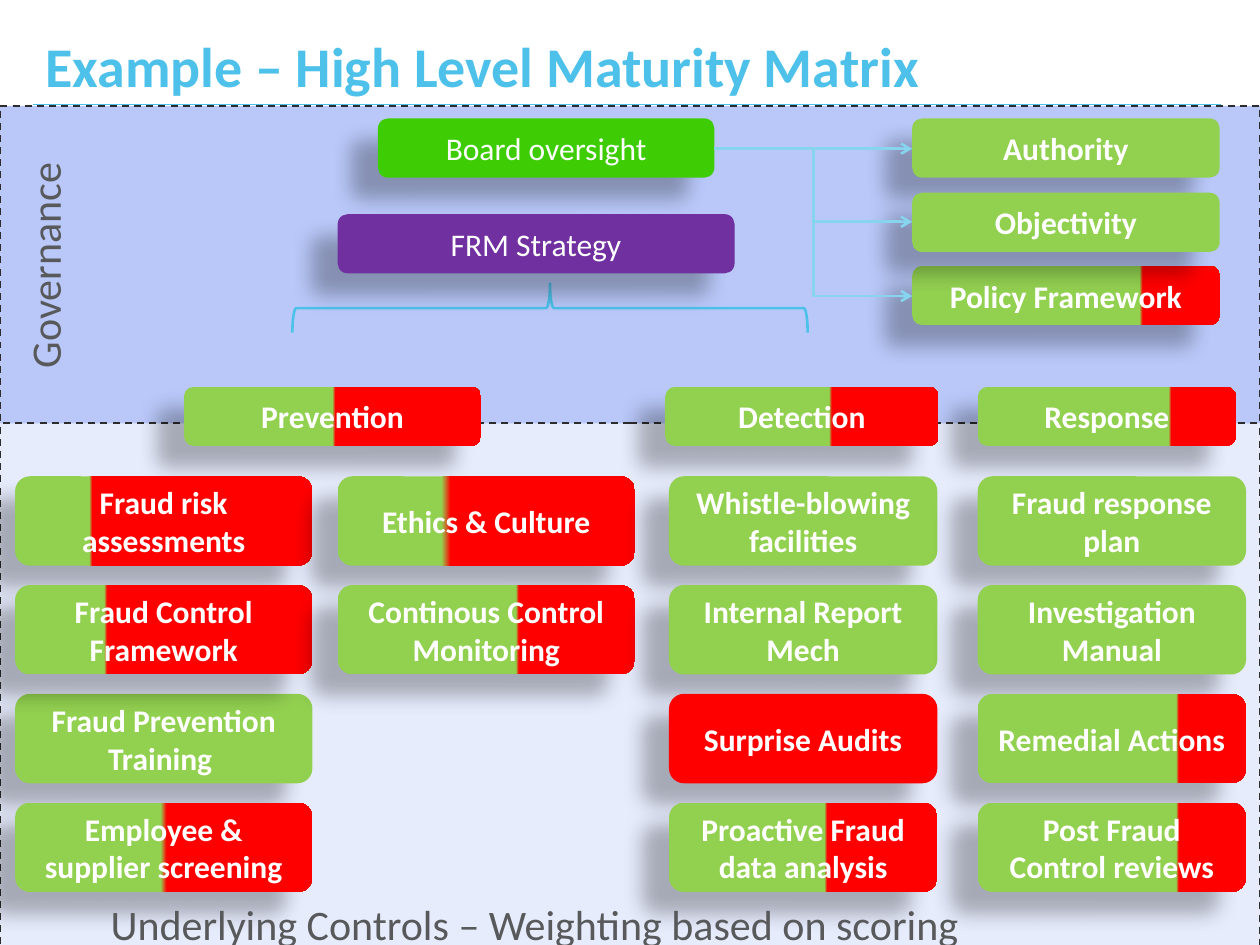
"""Build the high level maturity matrix slide."""
from dataclasses import dataclass

from lxml.etree import SubElement
from pptx import Presentation
from pptx.dml.color import RGBColor
from pptx.enum.dml import MSO_LINE_DASH_STYLE as DASH
from pptx.enum.shapes import MSO_CONNECTOR as WIRE, MSO_SHAPE as SHAPE
from pptx.enum.text import MSO_ANCHOR as ANCHOR, MSO_AUTO_SIZE as FIT, PP_ALIGN as ALIGN
from pptx.oxml.ns import qn
from pptx.util import Inches, Pt


@dataclass(frozen=True)
class Theme:
    font: str = "Calibri"
    title_size: int = 32
    label_size: int = 24
    card_size: int = 18
    accent: str = "4EC1EA"
    arrow: str = "87D4EE"
    label: str = "58595B"
    white: str = "FFFFFF"
    border: str = "2C2C2D"
    governance: str = "B9C8F9"
    controls: str = "E7ECFD"
    mature: str = "92D050"
    gap: str = "FF0000"
    board: str = "3ECD05"
    strategy: str = "7030A0"
    shadow: str = "000000"


THEME = Theme()
HEADER_HEIGHT, CARD_HEIGHT = 0.47, 0.71
FIRST_ROW, LAST_ROW, ROW_COUNT = 3.78, 6.37, 4
ROW_PITCH = (LAST_ROW - FIRST_ROW) / (ROW_COUNT - 1)

PILLARS = [
    (1.46, 2.36, "Prevention", (50, 51)),
    (5.28, 2.17, "Detection", (60, 61)),
    (7.76, 2.05, "Response", (74, 75)),
]
CONTROLS = [
    (0.12, 2.36, [
        (0, "Fraud risk assessments", (25, 26)),
        (2, "Fraud Prevention Training ", THEME.mature),
        (3, "Employee & supplier screening", (49, 51)),
        (1, "Fraud Control Framework", (30, 31)),
    ]),
    (2.68, 2.36, [
        (0, "Ethics & Culture", (35, 38)),
        (1, "Continous Control Monitoring", (60, 61)),
    ]),
    (5.31, 2.13, [
        (0, "Whistle-blowing facilities", THEME.mature),
        (1, "Internal Report Mech", THEME.mature),
        (2, "Surprise Audits", THEME.gap),
        (3, "Proactive Fraud data analysis", (58, 59)),
    ]),
    (7.76, 2.13, [
        (0, "Fraud response plan", THEME.mature),
        (1, "Investigation Manual", THEME.mature),
        (2, "Remedial Actions", (74, 75)),
        (3, "Post Fraud Control reviews", (74, 75)),
    ]),
]
OVERSIGHT = [
    (3, 0.94, 2.67, "Board oversight", THEME.board, False),
    (2.68, 1.7, 3.15, "FRM Strategy", THEME.strategy, False),
    (7.24, 0.94, 2.44, "Authority", THEME.mature, True),
    (7.24, 2.11, 2.44, "Policy Framework", (74, 75), True),
    (7.24, 1.53, 2.44, "Objectivity", THEME.mature, True),
]
ARROWS = [(WIRE.STRAIGHT, 1.18), (WIRE.ELBOW, 1.76), (WIRE.ELBOW, 2.35)]


def rgb(value):
    """Turn a hex string into a colour."""
    return RGBColor.from_string(value)


def apply(target, formats):
    """Set each attribute named in formats on the target."""
    for name, value in formats.items():
        setattr(target, name, value)


def write(box, text, size, color, bold=False, align=ALIGN.LEFT, **frame):
    """Put one formatted paragraph in a box and return it."""
    apply(box.text_frame, {"word_wrap": True, **frame})
    para = box.text_frame.paragraphs[0]
    para.alignment = align
    span = para.add_run()
    span.text = text
    apply(span.font, {"name": THEME.font, "size": Pt(size), "bold": bold})
    span.font.color.rgb = rgb(color)
    return para


def stroke(shape, color, width):
    """Give a shape or connector a solid line."""
    shape.line.color.rgb = rgb(color)
    shape.line.width = Pt(width)


def add_plain(page, kind, area):
    """Add a preset shape without a shadow."""
    shape = page.shapes.add_shape(kind, *map(Inches, area))
    shape.shadow.inherit = False
    return shape


def add_color(parent, value):
    """Append a colour element to an XML parent and return it."""
    return SubElement(parent, qn("a:srgbClr"), val=value)


def fill_score(shape, score):
    """Fill with one colour, or split from mature to gap at two percentages."""
    if isinstance(score, str):
        shape.fill.solid()
        shape.fill.fore_color.rgb = rgb(score)
        return
    shape.fill.gradient()
    shape.fill.gradient_angle = 0
    stops = shape.element.spPr.find(qn("a:gradFill")).find(qn("a:gsLst"))
    for stop in list(stops):
        stops.remove(stop)
    colors = (THEME.mature, THEME.mature, THEME.gap, THEME.gap)
    for position, color in zip((0, *score, 100), colors):
        add_color(SubElement(stops, qn("a:gs"), pos=str(position * 1000)), color)


def cast_shadow(shape):
    """Cast a soft shadow to the lower left."""
    effects = shape.element.spPr.find(qn("a:effectLst"))
    shadow = SubElement(effects, qn("a:outerShdw"), blurRad=str(Pt(11.8)),
                        dist=str(Pt(19.7)), dir=str(141 * 60000), rotWithShape="0")
    SubElement(add_color(shadow, THEME.shadow), qn("a:alpha"), val="28000")


def add_card(page, area, text, score, bold=True):
    """Add a rounded card coloured by its maturity score."""
    card = add_plain(page, SHAPE.ROUNDED_RECTANGLE, area)
    fill_score(card, score)
    card.line.fill.background()
    cast_shadow(card)
    write(card, text, THEME.card_size, THEME.white, bold, ALIGN.CENTER,
          vertical_anchor=ANCHOR.MIDDLE)


def add_band(page, top, height, color):
    """Add a full-width band with a dashed border."""
    band = add_plain(page, SHAPE.RECTANGLE, (0, top, 10, height))
    fill_score(band, color)
    stroke(band, THEME.border, 1)
    band.line.dash_style = DASH.DASH


def add_label(page, area, text, rotation=0):
    """Add a large band label."""
    box = page.shapes.add_textbox(*map(Inches, area))
    box.rotation = rotation
    write(box, text, THEME.label_size, THEME.label, auto_size=FIT.SHAPE_TO_FIT_TEXT)


def add_wire(page, kind, ends, color, width, arrow=False):
    """Add a connector, with an open arrowhead if asked."""
    wire = page.shapes.add_connector(kind, *map(Inches, ends))
    stroke(wire, color, width)
    if arrow:
        SubElement(wire.line._get_or_add_ln(), qn("a:tailEnd"), type="arrow")
    SubElement(wire.element.spPr, qn("a:effectLst"))


def add_title(page, text):
    """Place and format the title placeholder."""
    title = page.shapes.title
    apply(title, {"left": Inches(0.26), "top": Inches(0.15),
                  "width": Inches(9.18), "height": Inches(0.68)})
    para = write(title, text, THEME.title_size, THEME.accent, True,
                 word_wrap=False, vertical_anchor=ANCHOR.BOTTOM, auto_size=FIT.NONE)
    para.line_spacing = 0.8


def add_brace(page):
    """Add the brace that opens from the strategy to its pillars."""
    brace = add_plain(page, SHAPE.RIGHT_BRACE, (4.17, 0.4, 0.39, 4.09))
    brace.rotation = 270
    brace.adjustments[0], brace.adjustments[1] = 0.08, 0.5
    brace.fill.background()
    stroke(brace, THEME.accent, 1.5)


def main():
    """Build and save the deck."""
    deck = Presentation()
    apply(deck, {"slide_width": Inches(10), "slide_height": Inches(7.5)})
    page = deck.slides.add_slide(deck.slide_layouts[5])
    add_title(page, "Example – High Level Maturity Matrix")
    add_wire(page, WIRE.STRAIGHT, (0.26, 0.83, 9.69, 0.83), THEME.accent, 1)
    add_band(page, 3.02, 4.49, THEME.controls)
    add_band(page, 0.84, 2.52, THEME.governance)
    add_label(page, (-1.46, 0.96, 3.62, 0.5), "Governance", 270)
    for left, width, text, score in PILLARS:
        add_card(page, (left, 3.07, width, HEADER_HEIGHT), text, score)
    for left, width, cards in CONTROLS:
        for row, text, score in cards:
            top = FIRST_ROW + row * ROW_PITCH
            add_card(page, (left, top, width, CARD_HEIGHT), text, score)
    add_label(page, (0.78, 7.08, 8.46, 0.5), "Underlying Controls – Weighting based on scoring")
    add_brace(page)
    for left, top, width, text, score, bold in OVERSIGHT:
        add_card(page, (left, top, width, HEADER_HEIGHT), text, score, bold)
    for kind, end in ARROWS:
        add_wire(page, kind, (5.67, 1.18, 7.24, end), THEME.arrow, 1.5, True)
    deck.save("out.pptx")


if __name__ == "__main__":
    main()
